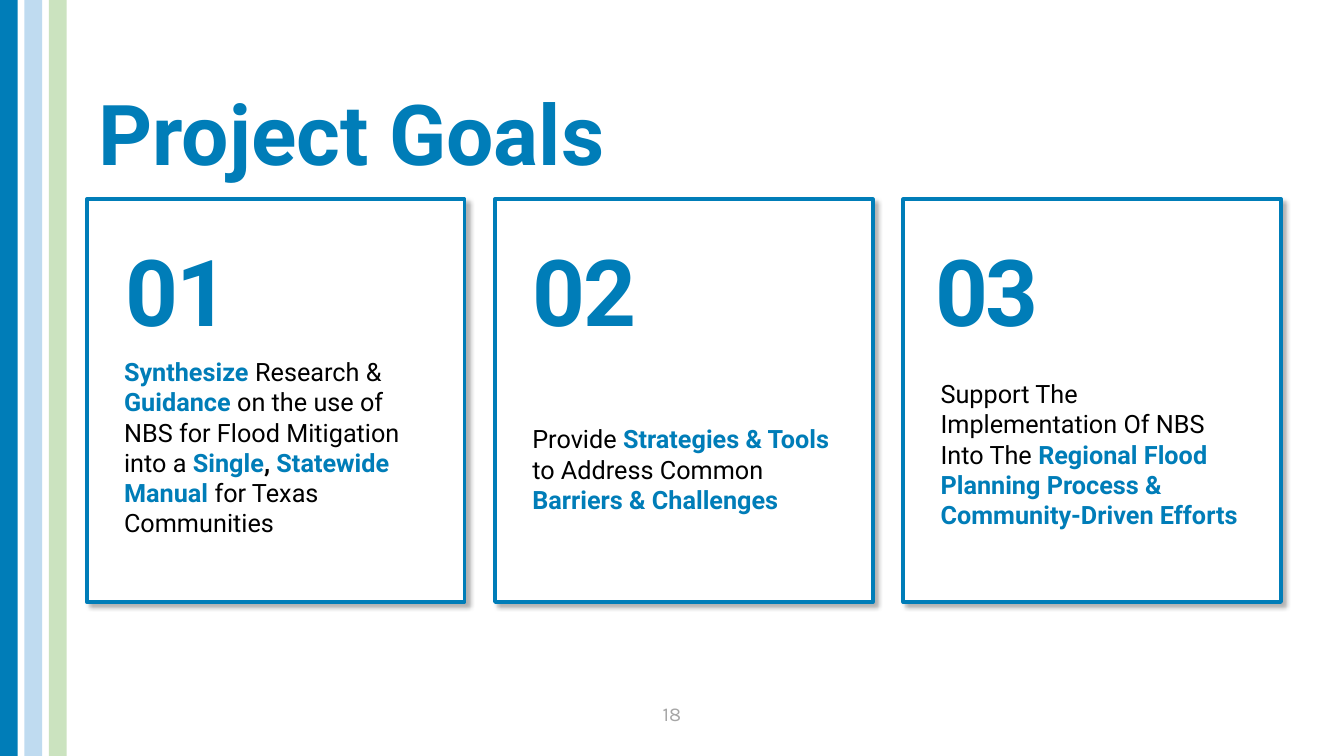
from lxml import etree
from pptx import Presentation
from pptx.dml.color import RGBColor
from pptx.enum.shapes import MSO_SHAPE
from pptx.enum.text import MSO_ANCHOR, MSO_AUTO_SIZE, PP_ALIGN
from pptx.oxml import parse_xml
from pptx.oxml.ns import nsdecls
from pptx.util import Inches, Pt

BLUE = RGBColor(0x00, 0x7D, 0xB8)
PALE_BLUE = RGBColor(0xBF, 0xDB, 0xF0)
PALE_GREEN = RGBColor(0xCB, 0xE3, 0xBF)
WHITE = RGBColor(0xFF, 0xFF, 0xFF)
BLACK = RGBColor(0x00, 0x00, 0x00)
GRAY = RGBColor(0xA6, 0xA6, 0xA6)

SLIDE_WIDTH, SLIDE_HEIGHT = 21.99, 12.37
STRIPE_WIDTH, STRIPE_PITCH = 0.29, 0.4
CARD_LEFT, CARD_TOP, CARD_WIDTH, CARD_HEIGHT = 1.42, 3.26, 6.18, 6.59
CARD_PITCH = 6.68
CARD_INSET = 0.61

PLAIN = (BLACK, False)
STRONG = (BLUE, True)
STRONG_BLACK = (BLACK, True)

GOALS = [
    ("01", 0.02, 1.32, [
        ("Synthesize", STRONG), (" Research & ", PLAIN), ("Guidance", STRONG),
        (" on the use of NBS for Flood Mitigation into a ", PLAIN),
        ("Single", STRONG), (", ", STRONG_BLACK), ("Statewide Manual", STRONG),
        (" for Texas Communities", PLAIN)]),
    ("02", 0, 0.6, [
        ("Provide ", PLAIN), ("Strategies & Tools ", STRONG),
        ("to Address Common ", PLAIN), ("Barriers & Challenges", STRONG)]),
    ("03", -0.09, 1.09, [
        ("Support The Implementation Of NBS Into The ", PLAIN),
        ("Regional Flood Planning Process & Community-Driven Efforts", STRONG)]),
]


def format_run(run, size, color, bold=False, name="Roboto"):
    """Set the font of one run."""
    run.font.name = name
    run.font.size = Pt(size)
    run.font.bold = bold
    run.font.color.rgb = color


def set_frame(frame, anchor, top, bottom):
    """Wrap a text frame and set its anchor and insets."""
    frame.word_wrap = True
    frame.vertical_anchor = anchor
    frame.margin_left = frame.margin_right = Inches(CARD_INSET)
    frame.margin_top, frame.margin_bottom = Inches(top), Inches(bottom)


def add_shadow(shape):
    """Give a shape a soft shadow to the lower right."""
    effects = parse_xml(
        f'<a:effectLst {nsdecls("a")}>'
        f'<a:outerShdw blurRad="{Pt(5)}" dist="{Pt(6)}" dir="2700000" algn="tl" rotWithShape="0">'
        '<a:srgbClr val="000000"><a:alpha val="30000"/></a:srgbClr>'
        '</a:outerShdw></a:effectLst>')
    shape.shadow.inherit = True
    shape._element.spPr.append(effects)


def add_stripes(slide):
    """Draw the full-height stripes along the left edge."""
    for column, color in enumerate((BLUE, PALE_BLUE, PALE_GREEN)):
        stripe = slide.shapes.add_shape(
            MSO_SHAPE.RECTANGLE, Inches(column * STRIPE_PITCH), 0,
            Inches(STRIPE_WIDTH), Inches(SLIDE_HEIGHT))
        stripe.shadow.inherit = False
        stripe.fill.solid()
        stripe.fill.fore_color.rgb = color
        stripe.line.fill.background()


def add_title(slide, text, left, top, width, height):
    """Place and format the slide title."""
    title = slide.shapes.title
    title.left, title.top = Inches(left), Inches(top)
    title.width, title.height = Inches(width), Inches(height)
    frame = title.text_frame
    frame.text = text
    frame.auto_size = MSO_AUTO_SIZE.NONE
    frame.vertical_anchor = MSO_ANCHOR.BOTTOM
    paragraph = frame.paragraphs[0]
    paragraph.alignment = PP_ALIGN.LEFT
    paragraph.line_spacing = 0.9
    format_run(paragraph.runs[0], 98.9, BLUE, True)


def add_card(slide, left, top, goal):
    """Draw one goal card with its number and statement."""
    number, number_shift, bottom_inset, parts = goal
    card = slide.shapes.add_shape(
        MSO_SHAPE.RECTANGLE, Inches(left), Inches(top),
        Inches(CARD_WIDTH), Inches(CARD_HEIGHT))
    card.fill.solid()
    card.fill.fore_color.rgb = WHITE
    card.line.color.rgb = BLUE
    card.line.width = Pt(4.5)
    add_shadow(card)
    set_frame(card.text_frame, MSO_ANCHOR.MIDDLE, 2.84, bottom_inset)
    paragraph = card.text_frame.paragraphs[0]
    paragraph.alignment = PP_ALIGN.LEFT
    for text, (color, bold) in parts:
        run = paragraph.add_run()
        run.text = text
        format_run(run, 29.7, color, bold)

    label = slide.shapes.add_textbox(
        Inches(left + number_shift), Inches(top + 0.54), Inches(CARD_WIDTH), Inches(2.11))
    set_frame(label.text_frame, MSO_ANCHOR.MIDDLE, 0.3, 0.3)
    label.text_frame.text = number
    paragraph = label.text_frame.paragraphs[0]
    paragraph.line_spacing = 0.9
    format_run(paragraph.runs[0], 108.8, BLUE, True)
    paragraph.runs[0].font._element.set("spc", "-250")


def add_page_number(slide, text, left, top, width, height):
    """Place the centred page number."""
    box = slide.shapes.add_textbox(Inches(left), Inches(top), Inches(width), Inches(height))
    box.text_frame.word_wrap = True
    box.text_frame.text = text
    paragraph = box.text_frame.paragraphs[0]
    paragraph.alignment = PP_ALIGN.CENTER
    format_run(paragraph.runs[0], 23.1, GRAY, name="Karla")


def main():
    """Build and save the project goals slide."""
    presentation = Presentation()
    presentation.slide_width = Inches(SLIDE_WIDTH)
    presentation.slide_height = Inches(SLIDE_HEIGHT)
    slide = presentation.slides.add_slide(presentation.slide_layouts[5])
    add_stripes(slide)
    add_title(slide, "Project Goals", 1.51, 0.66, 18.09, 2.39)
    for column, goal in enumerate(GOALS):
        add_card(slide, CARD_LEFT + column * CARD_PITCH, CARD_TOP, goal)
    add_page_number(slide, "18", 10.18, 11.43, 1.63, 0.49)
    presentation.save("out.pptx")


if __name__ == "__main__":
    main()
